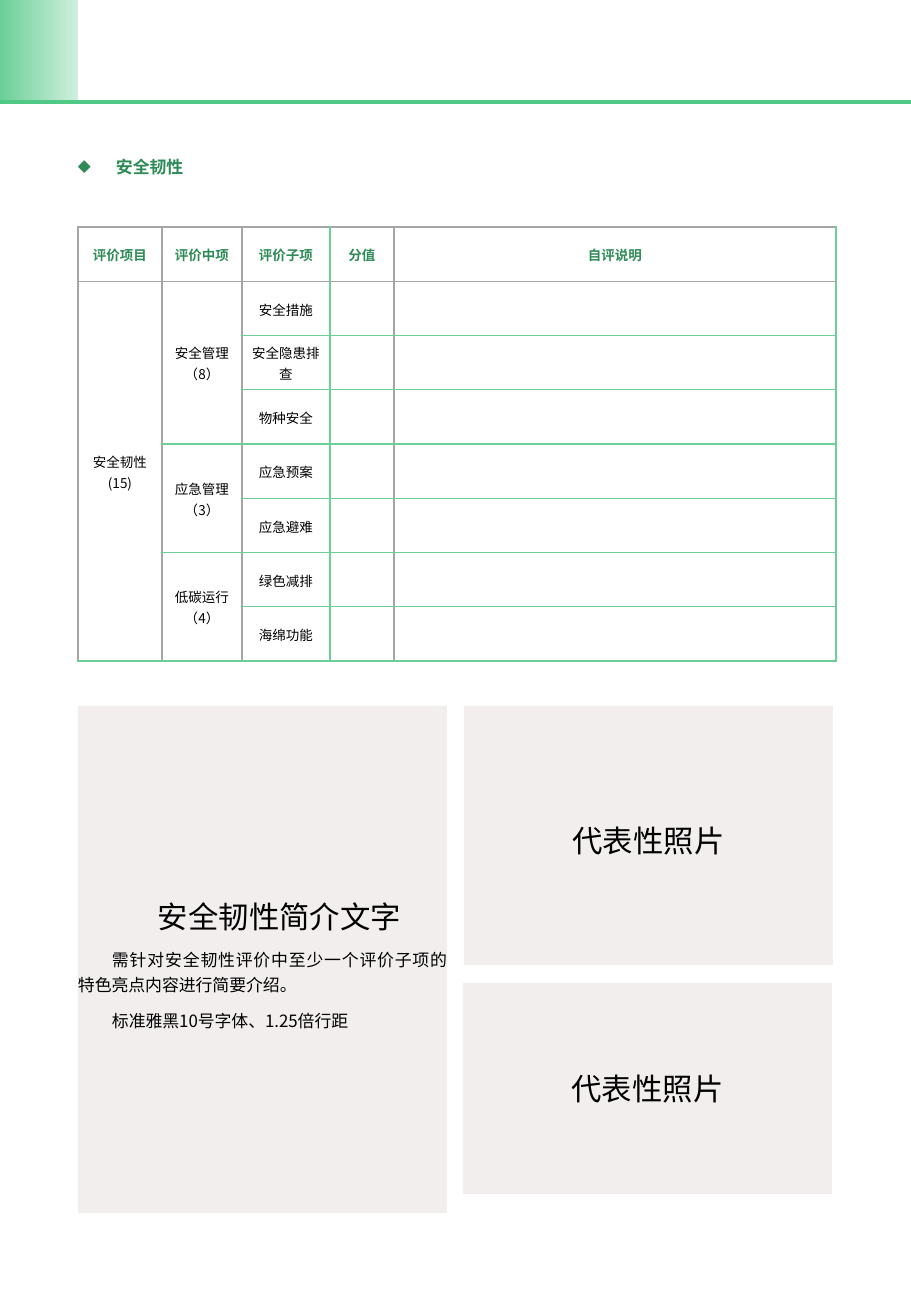
import pptx
import pptx.dml.color
import pptx.enum.shapes
import pptx.enum.text
import pptx.oxml
import pptx.oxml.ns
import pptx.util
from lxml import etree

PX = 7526  # EMU per px
FONT = "Noto Sans CJK SC"
GREEN, DARK_GREEN, GREY, PANEL, BLACK = "6CCF98", "2E8B57", "A6A6A6", "F2EEEE", "000000"
ALIGN = pptx.enum.text.PP_ALIGN
MIDDLE = pptx.enum.text.MSO_ANCHOR.MIDDLE
RECT = pptx.enum.shapes.MSO_SHAPE.RECTANGLE
qn = pptx.oxml.ns.qn


def rgb(value):
    return pptx.dml.color.RGBColor.from_string(value)


def write(p, text, size, color=BLACK, bold=False, align=ALIGN.CENTER, spacing=1.25, after=0):
    """Format one paragraph and add its single run."""
    p.alignment = align
    p.line_spacing = spacing
    p.space_after = pptx.util.Pt(after)
    r = p.add_run()
    r.text = text
    r.font.size = pptx.util.Pt(size)
    r.font.bold = bold
    r.font.color.rgb = rgb(color)
    r.font.name = FONT
    etree.SubElement(r.font._element, qn("a:ea")).set("typeface", FONT)


prs = pptx.Presentation()
prs.slide_width, prs.slide_height = 911 * PX, 1316 * PX
s = prs.slides.add_slide(prs.slide_layouts[6])

# Header band
band = s.shapes.add_shape(RECT, 0, 0, 78 * PX, 102 * PX)
band.shadow.inherit = False
band.line.fill.background()
band.fill.gradient()
band.fill.gradient_angle = 0
for stop, color in zip(band.fill.gradient_stops, (GREEN, "CEEFDD")):
    stop.color.rgb = rgb(color)

rule = s.shapes.add_connector(
    pptx.enum.shapes.MSO_CONNECTOR.STRAIGHT, -1 * PX, 102 * PX, 914 * PX, 102 * PX)
rule.line.color.rgb = rgb("50C987")
rule.line.width = pptx.util.Pt(2.5)
etree.SubElement(rule._element.spPr, qn("a:effectLst"))

# Section heading
heading = s.shapes.add_textbox(78 * PX, 152 * PX, 378 * PX, 23 * PX)
tf = heading.text_frame
tf.word_wrap = True
tf.margin_left = tf.margin_right = tf.margin_top = tf.margin_bottom = 0
p = tf.paragraphs[0]
write(p, "安全韧性", 10, DARK_GREEN, True, ALIGN.JUSTIFY, after=12)
pPr = p._p.get_or_add_pPr()
pPr.set("marL", str(38 * PX))
pPr.set("indent", str(-38 * PX))
etree.SubElement(pPr, qn("a:buChar")).set("char", "◆")

# Evaluation table
headers = ["评价项目", "评价中项", "评价子项", "分值", "自评说明"]
groups = [
    ("安全管理（8）", ["安全措施", "安全隐患排查", "物种安全"]),
    ("应急管理（3）", ["应急预案", "应急避难"]),
    ("低碳运行\n（4）", ["绿色减排", "海绵功能"]),
]
rows = [headers]
for group, items in groups:
    for i, item in enumerate(items):
        rows.append(["", "" if i else group, item, "", ""])
rows[1][0] = "安全韧性(15)"

frame = s.shapes.add_table(len(rows), len(headers), 78 * PX, 227 * PX, 758 * PX, 434 * PX)
table = frame.table
table.first_row = table.horz_banding = False
for column, width in zip(table.columns, (84, 80, 88, 64, 442)):
    column.width = width * PX
for row in table.rows:
    row.height = 434 * PX // len(rows)

table.cell(1, 0).merge(table.cell(len(rows) - 1, 0))
top = 1
for group, items in groups:
    table.cell(top, 1).merge(table.cell(top + len(items) - 1, 1))
    top += len(items)

for i, texts in enumerate(rows):
    for j, text in enumerate(texts):
        cell = table.cell(i, j)
        cell.vertical_anchor = MIDDLE
        cell.margin_left = cell.margin_right = 8 * PX
        cell.margin_top = cell.margin_bottom = 6 * PX
        tf = cell.text_frame
        for k, line in enumerate(text.split("\n")):
            p = tf.add_paragraph() if k else tf.paragraphs[0]
            if line:
                write(p, line, 8, BLACK if i else DARK_GREEN, i == 0, spacing=1.07)
            else:
                p._p.get_or_add_endParaRPr().set("sz", "800")

        edges = {"lnL": GREEN if j == 3 else GREY, "lnR": GREEN if j in (2, 4) else GREY}
        if not cell.is_spanned:
            edges["lnT"] = GREEN if i > 1 else GREY
        if i == len(rows) - 1 or cell.is_merge_origin or not table.cell(i + 1, j).is_spanned:
            edges["lnB"] = GREEN if i else GREY
        tcPr = cell._tc.get_or_add_tcPr()
        for tag in ("lnL", "lnR", "lnT", "lnB"):
            if tag in edges:
                ln = etree.SubElement(tcPr, qn("a:" + tag), w="12700")
                fill = etree.SubElement(ln, qn("a:solidFill"))
                etree.SubElement(fill, qn("a:srgbClr"), val=edges[tag])
        cell.fill.background()

# Text and photo panels: box, paragraphs (text, size, alignment), indent, spacing, space after
intro = [
    ("安全韧性简介文字", 18, ALIGN.CENTER),
    ("需针对安全韧性评价中至少一个评价子项的特色亮点内容进行简要介绍。", 10, ALIGN.JUSTIFY),
    ("标准雅黑10号字体、1.25倍行距", 10, ALIGN.JUSTIFY),
]
photo = [("代表性照片", 18, ALIGN.CENTER)]
panels = [
    ((78, 706, 369, 507), intro, 34, 1.25, 6),
    ((464, 706, 369, 259), photo, 0, 1.25, 6),
    ((463, 983, 369, 211), photo, 0, 1.0, 0),
]
for box, paragraphs, indent, spacing, after in panels:
    sp = s.shapes.add_shape(RECT, *(v * PX for v in box))
    sp.shadow.inherit = False
    sp.fill.solid()
    sp.fill.fore_color.rgb = rgb(PANEL)
    sp.line.fill.background()
    tf = sp.text_frame
    tf.word_wrap = True
    tf.vertical_anchor = MIDDLE
    tf.margin_left = tf.margin_right = tf.margin_top = tf.margin_bottom = 0
    for k, (text, size, align) in enumerate(paragraphs):
        p = tf.add_paragraph() if k else tf.paragraphs[0]
        write(p, text, size, align=align, spacing=spacing, after=after)
        p._p.get_or_add_pPr().set("indent", str(indent * PX))

prs.save("out.pptx")
